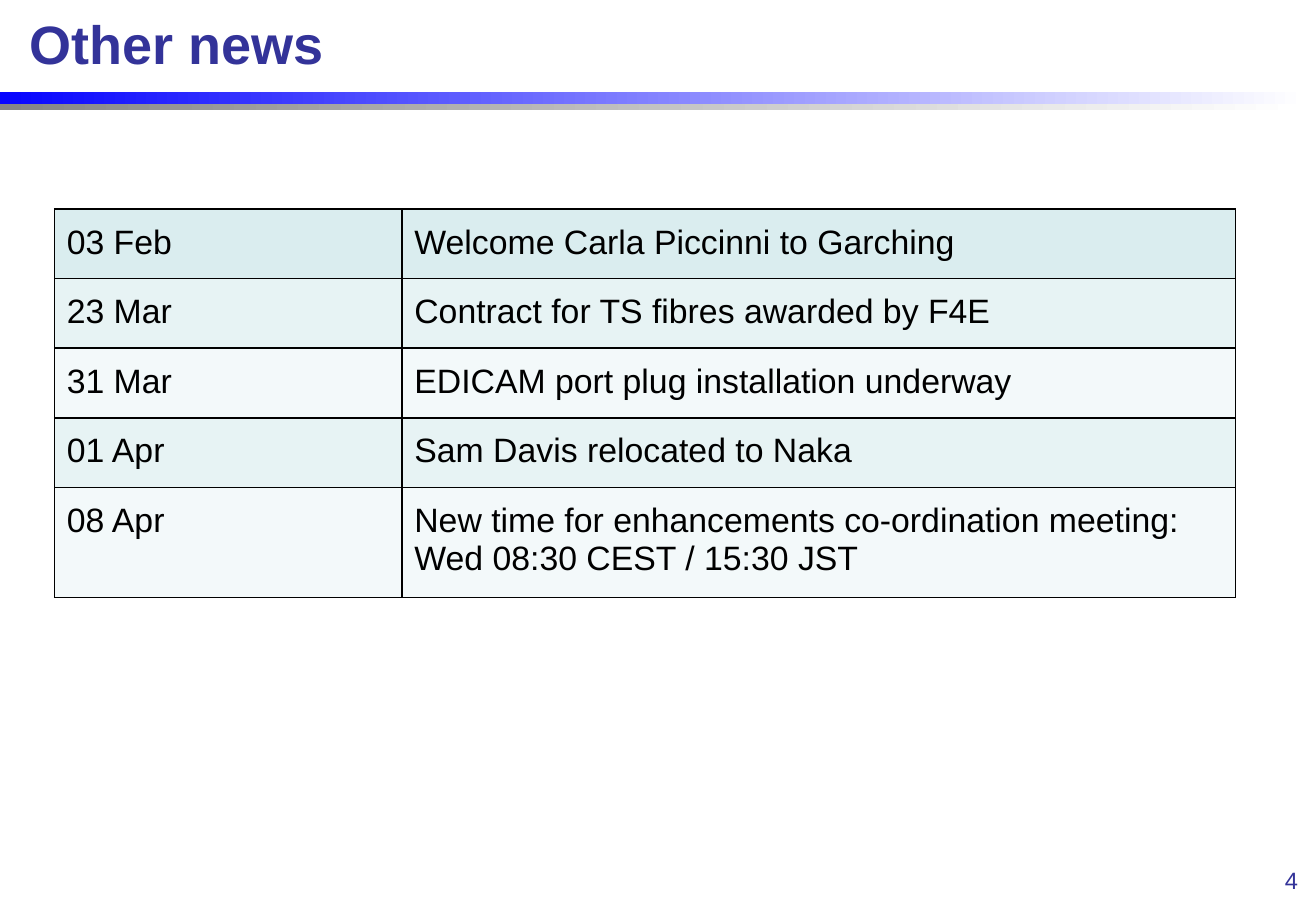
from lxml.etree import SubElement
from pptx import Presentation
from pptx.dml.color import RGBColor
from pptx.enum.shapes import MSO_SHAPE
from pptx.enum.text import MSO_ANCHOR, PP_ALIGN
from pptx.oxml.ns import qn
from pptx.util import Inches, Pt


def color(value):
    return RGBColor.from_string(value)


def write(box, text, size, ink, bold=False, align=PP_ALIGN.LEFT):
    para = box.text_frame.paragraphs[0]
    para.alignment = align
    span = para.add_run()
    span.text = text
    font_format = {"name": "Arial", "size": Pt(size), "bold": bold}
    for name, value in font_format.items():
        setattr(span.font, name, value)
    span.font.color.rgb = color(ink)


deck = Presentation()
deck.slide_width, deck.slide_height = Inches(10.83), Inches(7.5)
page = deck.slides.add_slide(deck.slide_layouts[5])

# Gradient rule under the title: grey shadow bar, then blue bar
for top, width, start in [(0.81, 10.69, "858585"), (0.76, 10.75, "0705FF")]:
    bar = page.shapes.add_shape(
        MSO_SHAPE.RECTANGLE, 0, Inches(top), Inches(width), Inches(0.1))
    bar.shadow.inherit = False
    bar.line.fill.background()
    bar.fill.gradient()
    bar.fill.gradient_angle = 0
    for stop, shade in zip(bar.fill.gradient_stops, (start, "FFFFFF")):
        stop.color.rgb = color(shade)

# Title
title = page.shapes.title
title.left, title.top = Inches(0.14), Inches(0)
title.width, title.height = Inches(7.87), Inches(0.71)
title.text_frame.vertical_anchor = MSO_ANCHOR.MIDDLE
write(title, "Other news", 32, "333399", bold=True)

# Page number
number = page.shapes.add_textbox(
    Inches(8.25), Inches(7.08), Inches(2.53), Inches(0.33))
number.text_frame.word_wrap = True
write(number, "4", 14, "333399", align=PP_ALIGN.RIGHT)

# News table
news = [
    ("03 Feb", "Welcome Carla Piccinni to Garching"),
    ("23 Mar", "Contract for TS fibres awarded by F4E"),
    ("31 Mar", "EDICAM port plug installation underway"),
    ("01 Apr", "Sam Davis relocated to Naka"),
    ("08 Apr", "New time for enhancements co-ordination meeting: "
               "Wed 08:30 CEST / 15:30 JST"),
]
row_fills = ["DAEDEF", "E7F3F4", "F3F9FA", "E7F3F4", "F3F9FA"]
row_heights = [0.55, 0.55, 0.55, 0.55, 0.85]
cell_format = {
    "margin_left": Inches(0.1), "margin_right": Inches(0.1),
    "margin_top": Inches(0.12), "margin_bottom": Inches(0.12),
}
table = page.shapes.add_table(
    len(news), 2, Inches(0.45), Inches(1.72),
    Inches(9.72), Inches(sum(row_heights))).table
for column, width in zip(table.columns, (2.86, 6.86)):
    column.width = Inches(width)

for row, texts, fill, height in zip(table.rows, news, row_fills, row_heights):
    row.height = Inches(height)
    for cell, text in zip(row.cells, texts):
        for name, value in cell_format.items():
            setattr(cell, name, value)
        write(cell, text, 20, "000000")
        # Borders come before the fill in the cell properties
        properties = cell._tc.get_or_add_tcPr()
        for side in ("a:lnL", "a:lnR", "a:lnT", "a:lnB"):
            border = SubElement(properties, qn(side), w=str(Pt(1)))
            solid = SubElement(border, qn("a:solidFill"))
            SubElement(solid, qn("a:srgbClr"), val="000000")
        cell.fill.solid()
        cell.fill.fore_color.rgb = color(fill)

deck.save("out.pptx")
